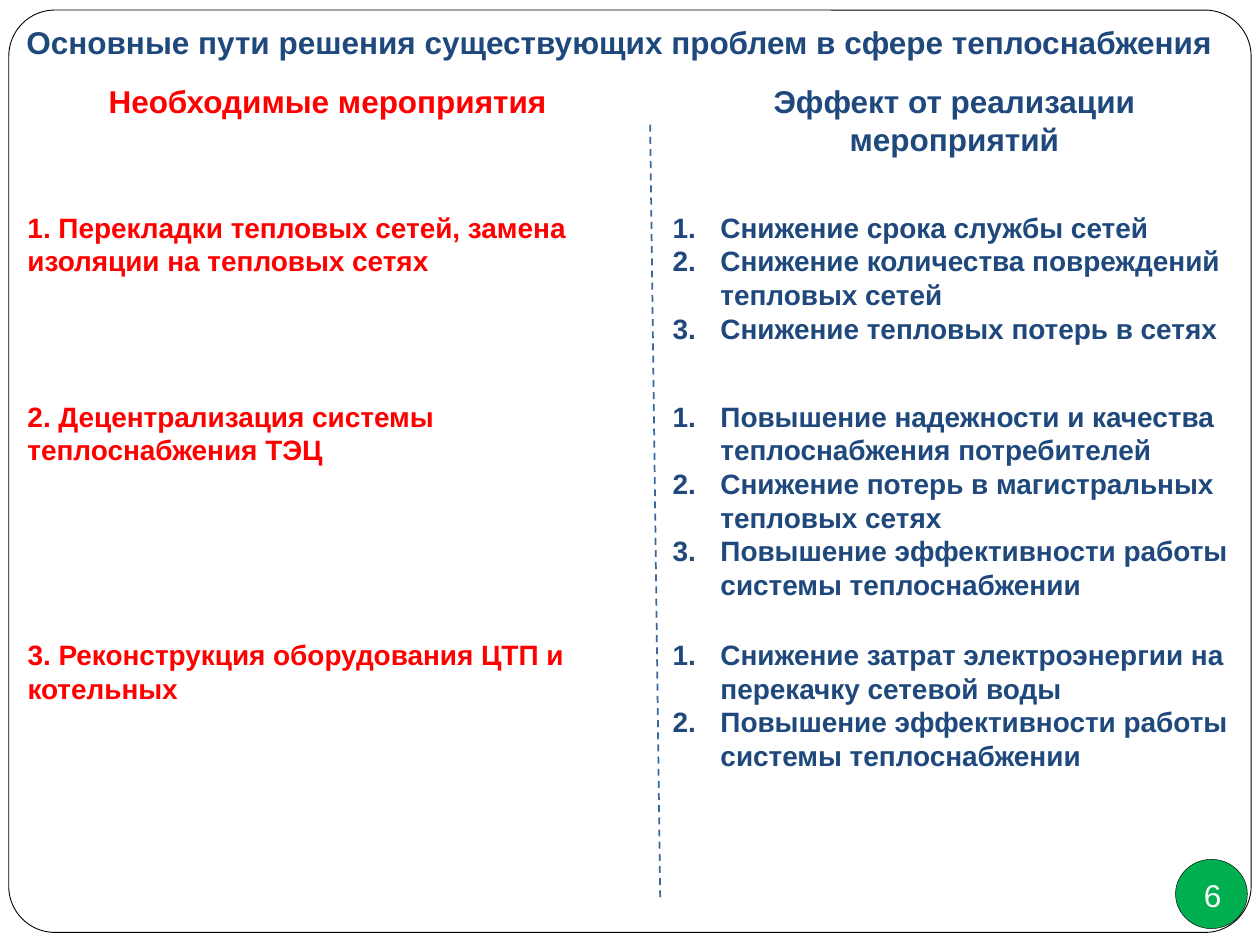
import pptx
import pptx.dml.color
import pptx.enum.dml
import pptx.enum.shapes
import pptx.enum.text
import pptx.oxml.ns
import pptx.util
from lxml import etree

Inches = pptx.util.Inches
RGBColor = pptx.dml.color.RGBColor
ALIGN = pptx.enum.text.PP_ALIGN
SHAPE = pptx.enum.shapes.MSO_SHAPE

RED = RGBColor(0xFF, 0x00, 0x00)
NAVY = RGBColor(0x1F, 0x49, 0x7D)
DIVIDER_BLUE = RGBColor(0x3B, 0x67, 0x9C)
GREEN = RGBColor(0x00, 0xB0, 0x50)
WHITE = RGBColor(0xFF, 0xFF, 0xFF)
BLACK = RGBColor(0x00, 0x00, 0x00)

MEASURES_LEFT, EFFECTS_LEFT = 0.12, 5.24
EFFECTS_WIDTH = 4.67

# top, measure, measure width, effects
SECTIONS = [
    (1.62, "1. Перекладки тепловых сетей, замена изоляции на тепловых сетях", 5.2, [
        "Снижение срока службы сетей",
        "Снижение количества повреждений тепловых сетей",
        "Снижение тепловых потерь в сетях",
    ]),
    (3.12, "2. Децентрализация системы \vтеплоснабжения ТЭЦ", 5.2, [
        "Повышение надежности и качества теплоснабжения потребителей",
        "Снижение потерь в магистральных тепловых сетях",
        "Повышение эффективности работы системы теплоснабжении",
    ]),
    (5.01, "3. Реконструкция оборудования ЦТП и котельных", 5.08, [
        "Снижение затрат электроэнергии на перекачку сетевой воды",
        "Повышение эффективности работы системы теплоснабжении",
    ]),
]


def number_paragraph(paragraph):
    properties = paragraph._p.get_or_add_pPr()
    properties.set("marL", str(Inches(0.38)))
    properties.set("indent", str(-Inches(0.38)))
    numbering = etree.SubElement(properties, pptx.oxml.ns.qn("a:buAutoNum"))
    numbering.set("type", "arabicPeriod")


def write_text(frame, lines, color, size=16, bold=True, align=ALIGN.LEFT, numbered=False):
    for index, line in enumerate(lines):
        paragraph = frame.add_paragraph() if index else frame.paragraphs[0]
        paragraph.text = line
        paragraph.alignment = align
        if numbered:
            number_paragraph(paragraph)
        for run in paragraph.runs:
            run.font.name = "Arial"
            run.font.size = pptx.util.Pt(size)
            run.font.bold = bold
            run.font.color.rgb = color


def add_text(slide, box, lines, color, **text_format):
    frame = slide.shapes.add_textbox(*map(Inches, box)).text_frame
    frame.word_wrap = True
    write_text(frame, lines, color, **text_format)


def add_outlined_shape(slide, preset, box, fill, line_width):
    shape = slide.shapes.add_shape(preset, *map(Inches, box))
    shape.shadow.inherit = False
    shape.fill.solid()
    shape.fill.fore_color.rgb = fill
    shape.line.color.rgb = BLACK
    shape.line.width = pptx.util.Pt(line_width)
    return shape


def add_divider(slide, start, end):
    divider = slide.shapes.add_connector(
        pptx.enum.shapes.MSO_CONNECTOR.STRAIGHT, *map(Inches, start + end))
    divider.line.color.rgb = DIVIDER_BLUE
    divider.line.width = pptx.util.Pt(1)
    divider.line.dash_style = pptx.enum.dml.MSO_LINE.DASH
    etree.SubElement(divider._element.spPr, pptx.oxml.ns.qn("a:effectLst"))


def add_page_number(slide, number):
    add_outlined_shape(slide, SHAPE.OVAL, (9.33, 6.82, 0.57, 0.55), GREEN, 0.25)
    label = slide.shapes.add_shape(SHAPE.OVAL, *map(Inches, (9.47, 6.94, 0.31, 0.32)))
    label.shadow.inherit = False
    label.fill.background()
    label.line.fill.background()
    frame = label.text_frame
    frame.word_wrap = False
    frame.vertical_anchor = pptx.enum.text.MSO_ANCHOR.MIDDLE
    frame.margin_left = frame.margin_right = frame.margin_top = frame.margin_bottom = 0
    write_text(frame, [number], WHITE, size=18, bold=False, align=ALIGN.CENTER)


def main():
    presentation = pptx.Presentation()
    presentation.slide_width, presentation.slide_height = Inches(10), Inches(7.5)
    slide = presentation.slides.add_slide(presentation.slide_layouts[6])

    border = add_outlined_shape(
        slide, SHAPE.ROUNDED_RECTANGLE, (0.07, 0.08, 9.86, 7.32), WHITE, 0.5)
    border.adjustments[0] = 0.05

    headings = [
        ((0.04, 0.13, 9.75, 0.63),
         "Основные пути решения существующих проблем в сфере теплоснабжения", NAVY),
        ((MEASURES_LEFT, 0.6, 4.96, 0.39), "Необходимые мероприятия", RED),
        ((EFFECTS_LEFT, 0.6, EFFECTS_WIDTH, 0.55), "Эффект от реализации мероприятий", NAVY),
    ]
    for box, heading, color in headings:
        add_text(slide, box, [heading], color, size=18, align=ALIGN.CENTER)

    add_divider(slide, (5.16, 0.99), (5.24, 7.14))
    for top, measure, measure_width, effects in SECTIONS:
        add_text(slide, (MEASURES_LEFT, top, measure_width, 0.55), [measure], RED)
        add_text(slide, (EFFECTS_LEFT, top, EFFECTS_WIDTH, 0.55), effects, NAVY, numbered=True)

    add_page_number(slide, "6")
    presentation.save("out.pptx")


if __name__ == "__main__":
    main()
